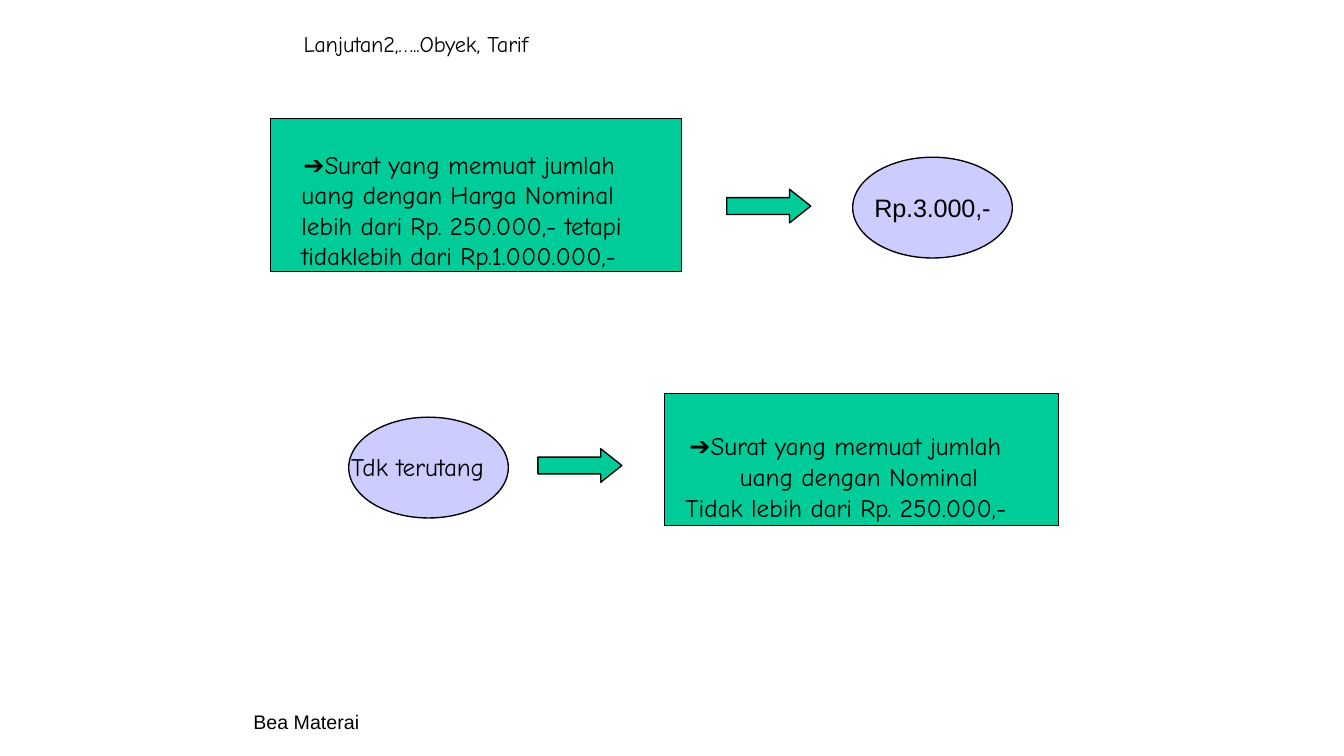
from pptx import Presentation
from pptx import util as u
from pptx.dml.color import RGBColor
from pptx.enum import shapes, text

Pt = u.Pt
GREEN = RGBColor(0x00, 0xCC, 0x99)
LILAC = RGBColor(0xCC, 0xCC, 0xFF)
BLACK = RGBColor(0x00, 0x00, 0x00)
ARIAL, COMIC = "Arial", "Comic Neue"
TIGHT = "-10"

deck = Presentation()
deck.slide_width, deck.slide_height = Pt(960), Pt(540)
slide = deck.slides.add_slide(deck.slide_layouts[6])


def draw(preset, place, fill, line_width):
    part = slide.shapes.add_shape(preset, *map(Pt, place))
    part.shadow.inherit = False
    part.fill.solid()
    part.fill.fore_color.rgb = fill
    part.line.color.rgb = BLACK
    part.line.width = Pt(line_width)
    return part


def write(frame, lines, size, top, left, first=0, spacing=None):
    frame.word_wrap = True
    frame.vertical_anchor = text.MSO_ANCHOR.TOP
    frame.margin_left = frame.margin_right = frame.margin_bottom = 0
    frame.margin_top = Pt(top)
    for number, (paragraph_first, paragraph_lines) in enumerate(lines):
        paragraph = frame.add_paragraph() if number else frame.paragraphs[0]
        paragraph.alignment = text.PP_ALIGN.LEFT
        paragraph.line_spacing = spacing
        if number:
            paragraph.space_before = Pt(0.6)
        properties = paragraph._p.get_or_add_pPr()
        properties.set("marL", str(Pt(left)))
        properties.set("indent", str(Pt(paragraph_first)))
        for row, runs in enumerate(paragraph_lines):
            if row:
                paragraph.add_line_break()
            for words, font, tracking in runs:
                run = paragraph.add_run()
                run.text = words
                run.font.name = font
                run.font.size = Pt(size)
                run.font.color.rgb = BLACK
                run._r.get_or_add_rPr().set("spc", tracking)


opening = [("➔", ARIAL, TIGHT), ("Surat ", COMIC, TIGHT),
           ("yang memuat ", COMIC, "0"), ("jumlah", COMIC, TIGHT)]

taxed_letter = draw(shapes.MSO_SHAPE.RECTANGLE, (193, 84.5, 293.5, 109.2), GREEN, 0.72)
write(taxed_letter.text_frame, [(1.4, [
    opening,
    [("uang ", COMIC, "0"), ("dengan Harga ", COMIC, TIGHT), ("Nominal", COMIC, "0")],
    [("lebih ", COMIC, "0"), ("dari Rp. ", COMIC, TIGHT),
     ("250.000,- ", COMIC, "0"), ("tetapi", COMIC, TIGHT)],
    [("tidaklebih dari ", COMIC, TIGHT), ("Rp.1.000.000,-", COMIC, "0")],
])], 18, 22.3, 22.3)

untaxed_letter = draw(shapes.MSO_SHAPE.RECTANGLE, (474.5, 281.2, 281.5, 94.3), GREEN, 0.72)
write(untaxed_letter.text_frame, [
    (2.9, [opening]),
    (38.9, [
        [("uang ", COMIC, "0"), ("dengan ", COMIC, TIGHT), ("Nominal", COMIC, "0")],
        [("Tidak lebih ", COMIC, "0"), ("dari Rp. ", COMIC, TIGHT), ("250.000,-", COMIC, "0")],
    ]),
], 18, 26.4, 15.1, spacing=Pt(21.6))

for left, top in [(249.1, 298), (609.1, 112.3)]:
    draw(shapes.MSO_SHAPE.OVAL, (left, top, 114, 72), LILAC, 0.96)

for left, top in [(519.1, 135.2), (384.2, 320.5)]:
    arrow = draw(shapes.MSO_SHAPE.RIGHT_ARROW, (left, top, 60, 24), GREEN, 0.96)
    arrow.adjustments[0] = 0.5
    arrow.adjustments[1] = 0.63

labels = [
    ((216, 20.2, 196, 20.2), 16, [("Lanjutan2,…..Obyek, Tarif", COMIC, TIGHT)]),
    ((249.8, 321.1, 113, 23), 18, [("Tdk ", COMIC, "0"), ("terutang", COMIC, TIGHT)]),
    ((623.5, 136.1, 87, 23), 18, [("Rp.3.000,-", ARIAL, TIGHT)]),
    ((180, 506.2, 80, 18), 14, [("Bea Materai", ARIAL, "0")]),
]
for place, size, runs in labels:
    label = slide.shapes.add_textbox(*map(Pt, place))
    write(label.text_frame, [(0, [runs])], size, 1, 1)

deck.save("out.pptx")
